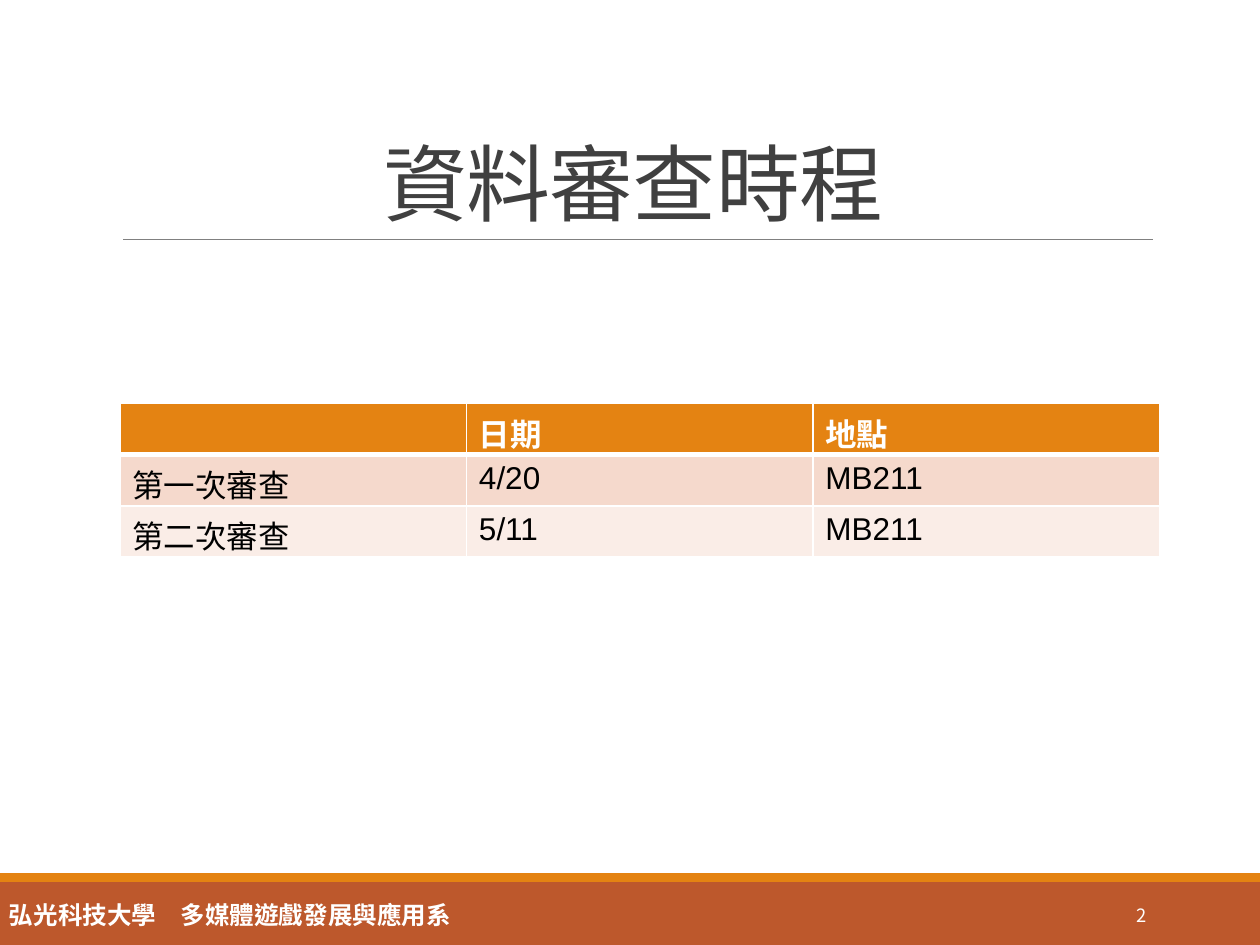
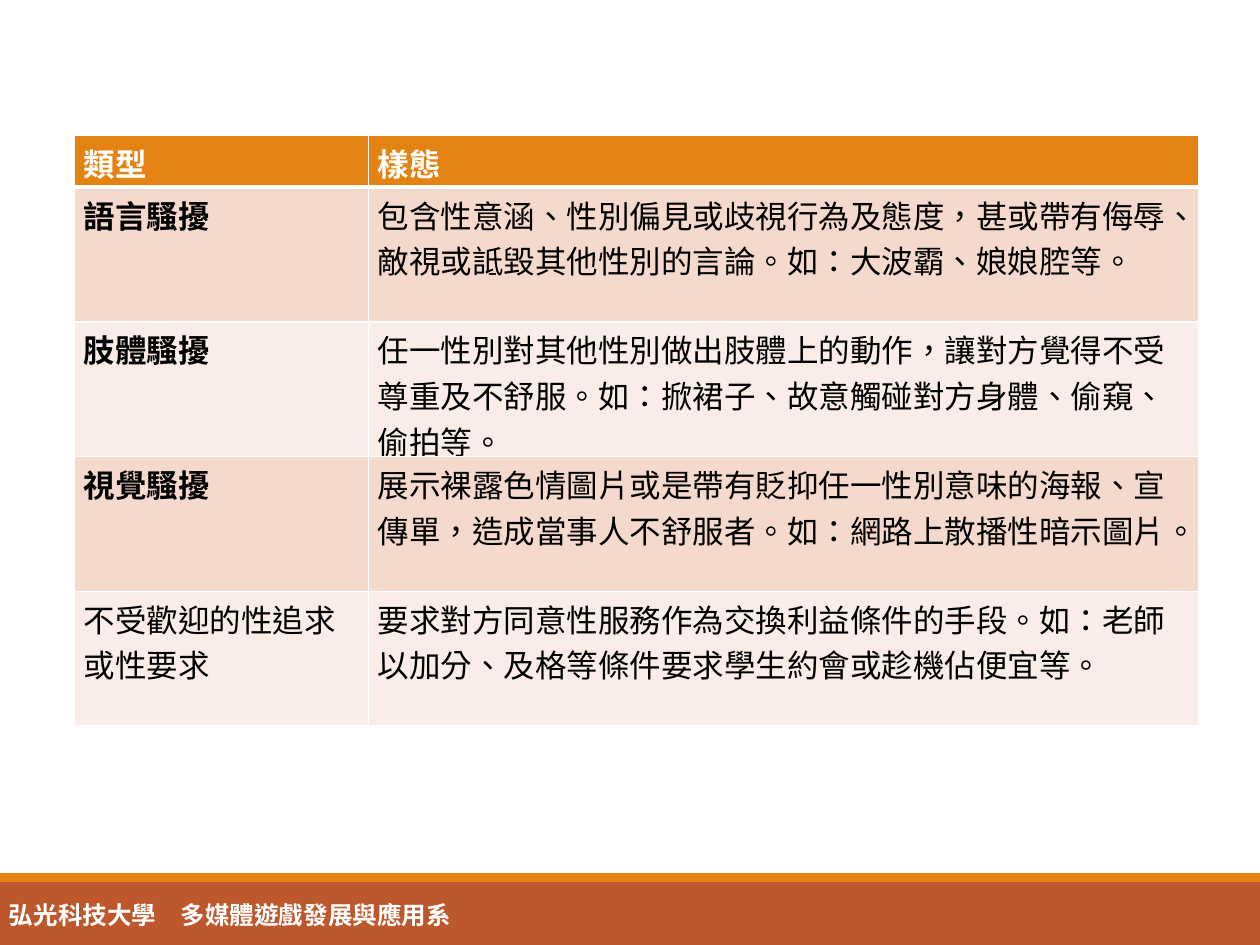
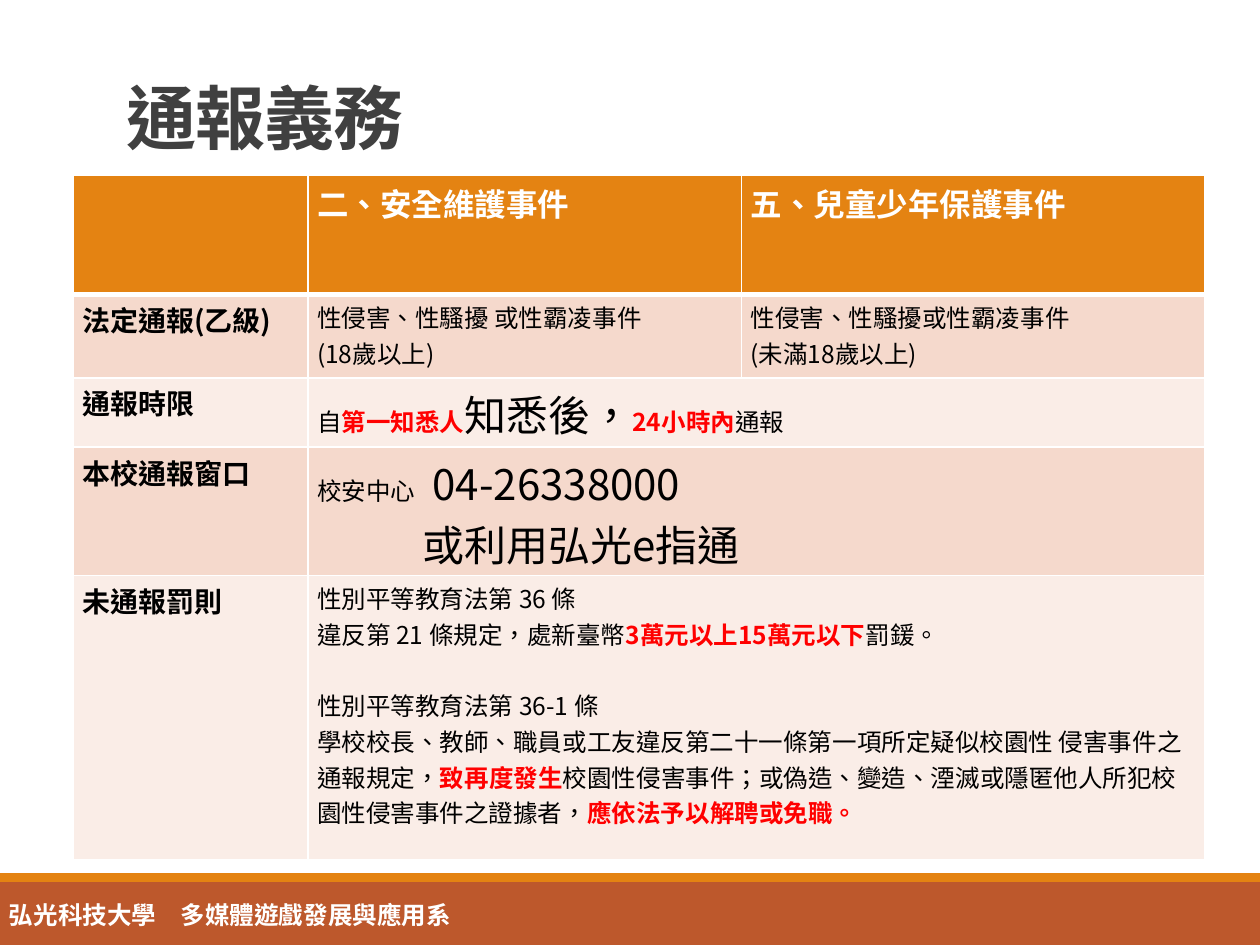
from dataclasses import dataclass
from typing import Optional, Union

from lxml.etree import SubElement
from pptx import Presentation
from pptx.dml.color import RGBColor
from pptx.enum.lang import MSO_LANGUAGE_ID
from pptx.enum.shapes import MSO_CONNECTOR, MSO_SHAPE
from pptx.enum.text import MSO_ANCHOR, MSO_AUTO_SIZE, PP_ALIGN
from pptx.oxml.ns import qn
from pptx.util import Pt

WHITE = RGBColor(0xFF, 0xFF, 0xFF)
BLACK = RGBColor(0, 0, 0)
RED = RGBColor(0xFF, 0, 0)
GRAY = RGBColor(0x80, 0x80, 0x80)
DARK = RGBColor(0x40, 0x40, 0x40)
RUST = RGBColor(0xBD, 0x58, 0x2C)
ORANGE = RGBColor(0xE4, 0x83, 0x12)
PEACH = RGBColor(0xF5, 0xD9, 0xCC)
BLUSH = RGBColor(0xFA, 0xED, 0xE7)
NOTO = "Noto Sans CJK SC"
TITLE_ONLY, BLANK = 5, 6


@dataclass
class Run:
    text: str
    size: float = 0
    red: bool = False


@dataclass
class Par:
    runs: list[Run]
    size: float = 14
    bold: bool = False
    before: float = 0
    indent: float = 0
    tab: float = 0


Cell = Optional[Union[str, list[Par]]]


@dataclass
class Grid:
    left: float
    top: float
    cols: list[float]
    rows: list[float]
    cells: list[list[Cell]]
    font: str = NOTO
    pad: tuple[float, float] = (5.2, 2.6)


@dataclass
class Band:
    top: float
    height: float
    color: RGBColor


BANDS = [Band(504, 36, RUST), Band(499, 5, ORANGE)]


def par(text: str, size: float = 14, bold: bool = False, before: float = 0, indent: float = 0) -> Par:
    return Par([Run(text)], size, bold, before, indent)


def label(text: str, size: float = 16) -> list[Par]:
    return [par(text, size, True)]


def style(para, font: str, size: float, color: RGBColor, bold: bool = False) -> None:
    para.font.name = font
    para.font.size = Pt(size)
    para.font.bold = bold
    para.font.color.rgb = color
    para.font.language_id = MSO_LANGUAGE_ID.TRADITIONAL_CHINESE


def add_text(slide, text: str, left: float, width: float, size: float, align: PP_ALIGN, bold: bool = False) -> None:
    frame = slide.shapes.add_textbox(Pt(left), Pt(508.5), Pt(width), Pt(28.8)).text_frame
    frame.word_wrap = True
    frame.vertical_anchor = MSO_ANCHOR.MIDDLE
    para = frame.paragraphs[0]
    para.text = text
    para.alignment = align
    style(para, NOTO, size, WHITE, bold)


def add_frame(slide) -> None:
    for band in BANDS:
        shape = slide.shapes.add_shape(MSO_SHAPE.RECTANGLE, 0, Pt(band.top), Pt(720), Pt(band.height))
        shape.shadow.inherit = False
        shape.fill.solid()
        shape.fill.fore_color.rgb = band.color
        shape.line.fill.background()
    add_text(slide, "弘光科技大學　多媒體遊戲發展與應用系", -25, 313, 14, PP_ALIGN.CENTER, True)


def add_rule(slide) -> None:
    rule = slide.shapes.add_connector(MSO_CONNECTOR.STRAIGHT, Pt(70.5), Pt(136.8), Pt(659), Pt(136.8))
    rule.line.color.rgb = GRAY
    rule.line.width = Pt(0.5)
    SubElement(rule._element.spPr, qn("a:effectLst"))


def set_title(slide, text: str, height: float, size: float, align: PP_ALIGN, bold: bool = False) -> None:
    title = slide.shapes.title
    title.left, title.top, title.width, title.height = Pt(65), Pt(22.3), Pt(594), Pt(height)
    frame = title.text_frame
    frame.auto_size = MSO_AUTO_SIZE.NONE
    frame.vertical_anchor = MSO_ANCHOR.BOTTOM
    para = frame.paragraphs[0]
    para.text = text
    para.alignment = align
    para.line_spacing = 0.85
    style(para, "Calibri", size, DARK, bold)
    para._p.pPr.get_or_add_defRPr().set("spc", "-50")


def add_edges(cell, row: int) -> None:
    props = cell._tc.get_or_add_tcPr()
    thick = {0: "lnB", 1: "lnT"}.get(row)
    for side in ("lnL", "lnR", "lnT", "lnB"):
        edge = SubElement(props, qn(f"a:{side}"), w=str(Pt(3 if side == thick else 1)))
        fill = SubElement(edge, qn("a:solidFill"))
        SubElement(fill, qn("a:srgbClr"), val=str(WHITE))


def fill_par(para, item: Par, font: str, head: bool) -> None:
    props = para._p.get_or_add_pPr()
    if item.indent:
        props.set("marL", str(Pt(item.indent)))
    if item.before:
        para.space_before = Pt(item.before)
    if item.tab:
        tabs = SubElement(props, qn("a:tabLst"))
        SubElement(tabs, qn("a:tab"), pos=str(Pt(item.tab)), algn="l")
    style(para, font, item.size, WHITE if head else BLACK, head or item.bold)
    for part in item.runs:
        run = para.add_run()
        run.text = part.text
        if part.size:
            run.font.size = Pt(part.size)
        if part.red:
            run.font.bold = True
            run.font.color.rgb = RED


def fill_cell(cell, value: Cell, grid: Grid, row: int) -> None:
    add_edges(cell, row)
    cell.fill.solid()
    cell.fill.fore_color.rgb = ORANGE if row == 0 else PEACH if row % 2 else BLUSH
    cell.margin_left = cell.margin_right = Pt(grid.pad[0])
    cell.margin_top = cell.margin_bottom = Pt(grid.pad[1])
    items = [par(value, 18)] if isinstance(value, str) else value or []
    frame = cell.text_frame
    for i, item in enumerate(items):
        para = frame.add_paragraph() if i else frame.paragraphs[0]
        fill_par(para, item, grid.font, row == 0)


def add_grid(slide, grid: Grid) -> None:
    table = slide.shapes.add_table(
        len(grid.rows), len(grid.cols), Pt(grid.left), Pt(grid.top),
        Pt(sum(grid.cols)), Pt(sum(grid.rows))).table
    table.first_row = table.horz_banding = False
    for col, width in zip(table.columns, grid.cols):
        col.width = Pt(width)
    for row, height in zip(table.rows, grid.rows):
        row.height = Pt(height)
    for r, values in enumerate(grid.cells):
        for c, value in enumerate(values):
            fill_cell(table.cell(r, c), value, grid, r)
            if value is None:
                table.cell(r, c - 1).merge(table.cell(r, c))


DATES = Grid(68.5, 230.5, [198] * 3, [29.3] * 3, [
    ["", "日期", "地點"],
    ["第一次審查", "4/20", "MB211"],
    ["第二次審查", "5/11", "MB211"],
], "Arial", (7.2, 3.6))

KINDS = Grid(42.7, 77.4, [168, 474.2], [29.5] + [77] * 4, [
    ["類型", "樣態"],
    [label("語言騷擾", 18),
     "包含性意涵、性別偏見或歧視行為及態度，甚或帶有侮辱、敵視或詆毀其他性別的言論。如：大波霸、娘娘腔等。"],
    [label("肢體騷擾", 18),
     "任一性別對其他性別做出肢體上的動作，讓對方覺得不受尊重及不舒服。如：掀裙子、故意觸碰對方身體、偷窺、偷拍等。"],
    [label("視覺騷擾", 18),
     "展示裸露色情圖片或是帶有貶抑任一性別意味的海報、宣傳單，造成當事人不舒服者。如：網路上散播性暗示圖片。"],
    ["不受歡迎的性追求或性要求",
     "要求對方同意性服務作為交換利益條件的手段。如：老師以加分、及格等條件要求學生約會或趁機佔便宜等。"],
])

DUTIES = Grid(42, 100.3, [134, 247.7, 264.8], [68.2, 47.5, 39.6, 73.4, 162.5], [
    ["", "二、安全維護事件", "五、兒童少年保護事件"],
    [label("法定通報(乙級)"),
     [par("性侵害、性騷擾 或性霸凌事件"), par("(18歲以上)")],
     [par("性侵害、性騷擾或性霸凌事件"), par("(未滿18歲以上)")]],
    [label("通報時限"),
     [Par([Run("自"), Run("第一知悉人", red=True), Run("知悉後，", 24),
           Run("24小時內", red=True), Run("通報")])],
     None],
    [label("本校通報窗口"),
     [Par([Run("校安中心\t"), Run("04-26338000", 24)], tab=66),
      par("或利用弘光e指通", 24, indent=60)],
     None],
    [label("未通報罰則"),
     [par("性別平等教育法第 36 條"),
      Par([Run("違反第 21 條規定，處新臺幣"), Run("3萬元以上15萬元以下", red=True), Run("罰鍰。")]),
      par("性別平等教育法第 36-1 條", before=20.3),
      Par([Run("學校校長、教師、職員或工友違反第二十一條第一項所定疑似校園性 侵害事件之通報規定，"),
           Run("致再度發生", red=True),
           Run("校園性侵害事件；或偽造、變造、湮滅或隱匿他人所犯校園性侵害事件之證據者，"),
           Run("應依法予以解聘或免職。", red=True)])],
     None],
])


def add_slide(deck, layout: int, grid: Grid):
    slide = deck.slides.add_slide(deck.slide_layouts[layout])
    add_frame(slide)
    add_grid(slide, grid)
    return slide


def main() -> None:
    deck = Presentation()
    deck.slide_width, deck.slide_height = Pt(720), Pt(540)

    plan = add_slide(deck, TITLE_ONLY, DATES)
    set_title(plan, "資料審查時程", 114.5, 48, PP_ALIGN.CENTER)
    add_rule(plan)
    add_text(plan, "2", 584.5, 78, 10.5, PP_ALIGN.RIGHT)

    add_slide(deck, BLANK, KINDS)

    duty = add_slide(deck, TITLE_ONLY, DUTIES)
    set_title(duty, "通報義務", 72, 40, PP_ALIGN.LEFT, True)

    deck.save("out.pptx")


if __name__ == "__main__":
    main()
